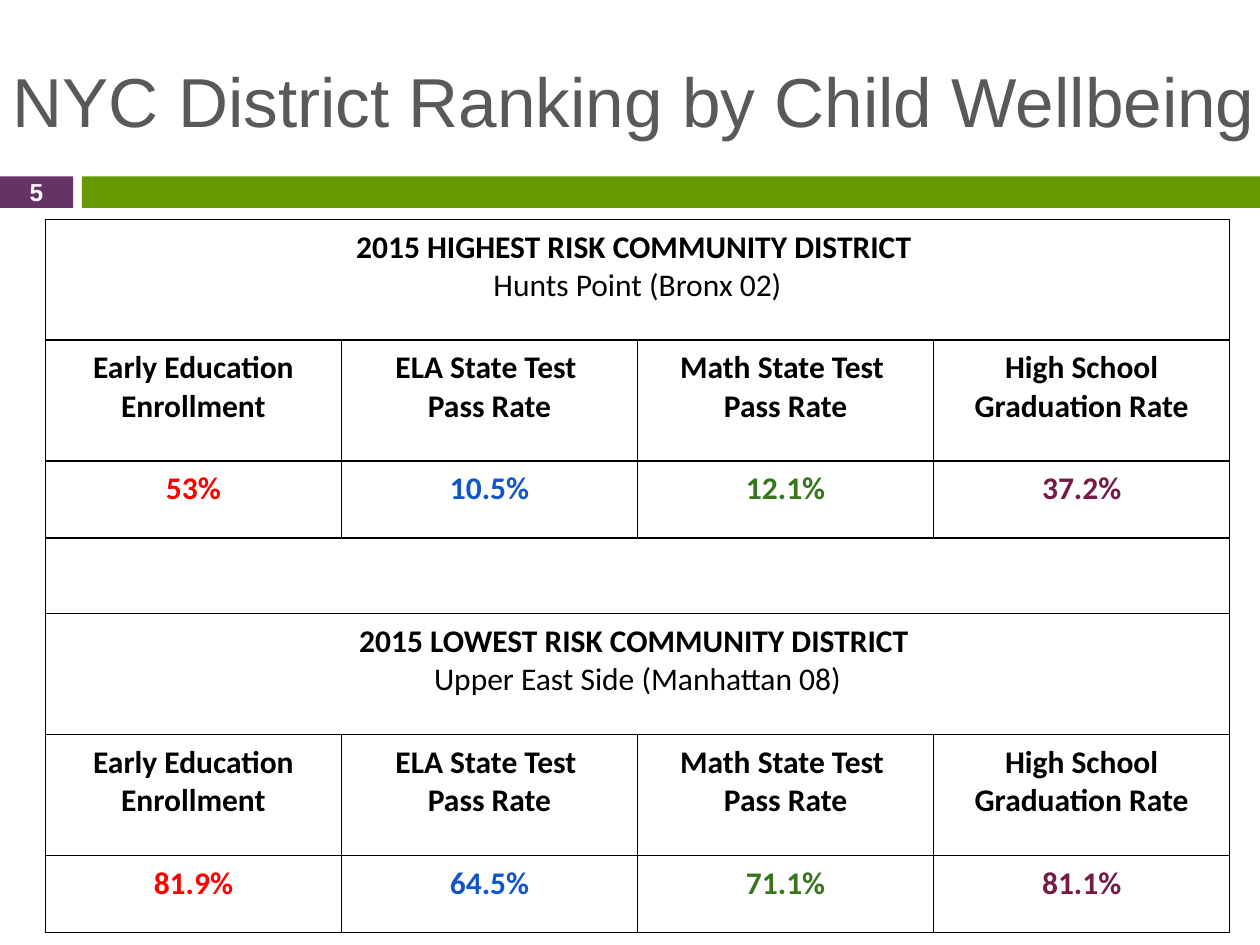
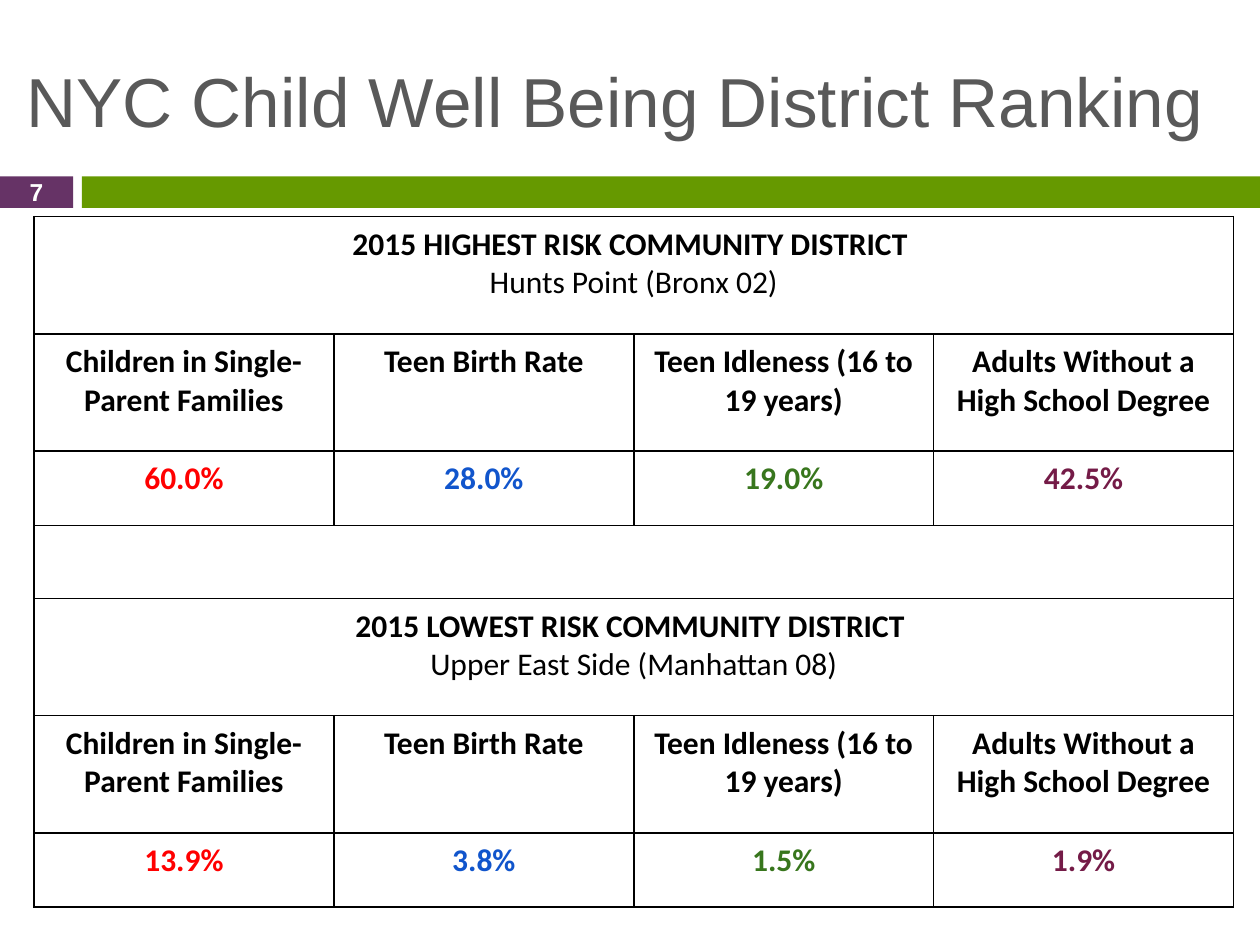
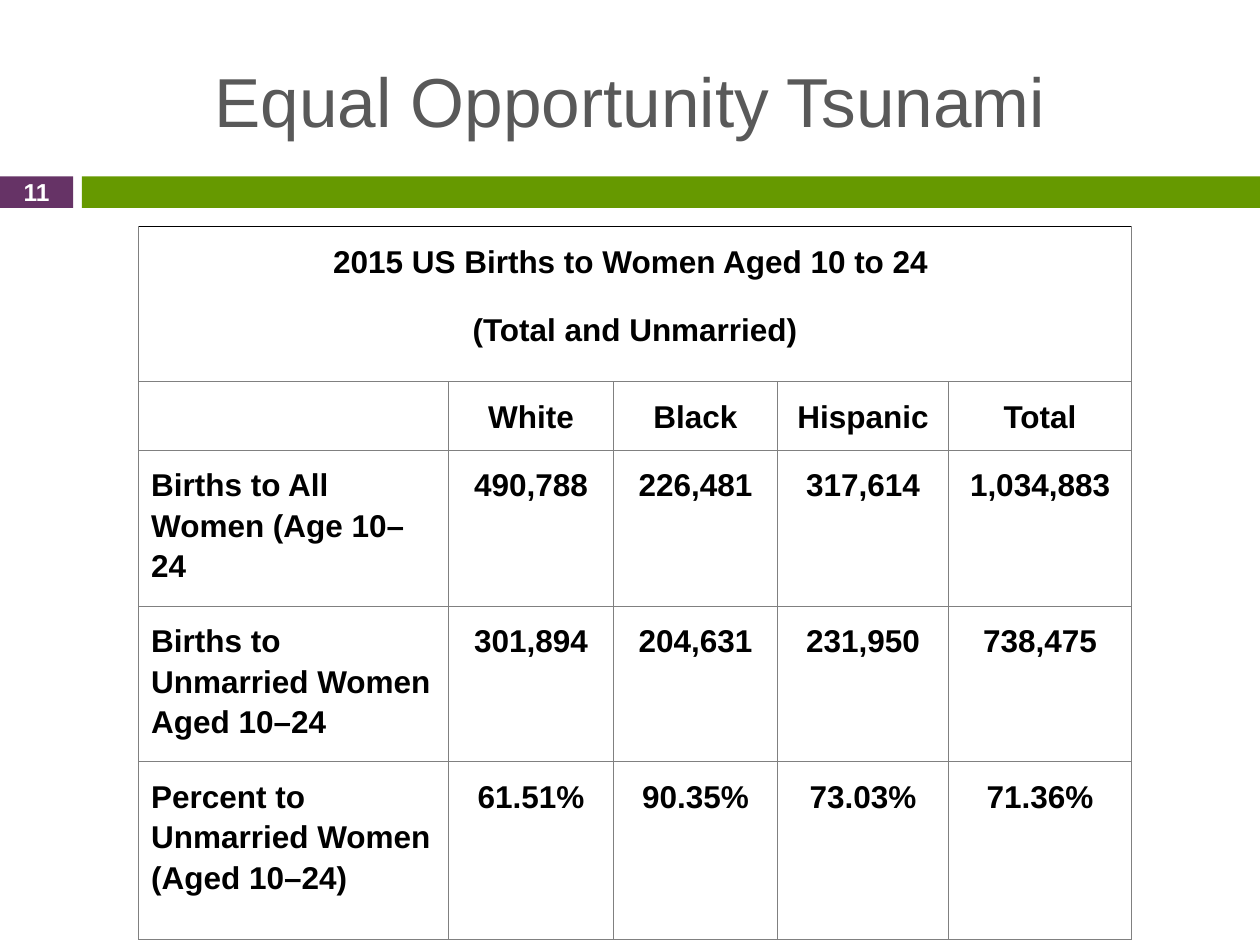
"""Build three slides of child wellbeing and birth statistics tables."""
import dataclasses

import lxml.etree
import pptx
import pptx.dml.color
import pptx.enum.shapes
import pptx.enum.text
import pptx.oxml.ns
import pptx.util

Inches = pptx.util.Inches
Pt = pptx.util.Pt
ALIGN = pptx.enum.text.PP_ALIGN
MIDDLE = pptx.enum.text.MSO_ANCHOR.MIDDLE


@dataclasses.dataclass(frozen=True)
class Theme:
    """Colours, fonts and type sizes shared by the slides."""
    purple: str = "663366"
    green: str = "669900"
    grey: str = "595959"
    rule: str = "808080"
    black: str = "000000"
    white: str = "FFFFFF"
    indicators: tuple = ("FF0000", "1155CC", "38761D", "741B47")
    heading_font: str = "Arial"
    district_font: str = "Calibri"
    title_size: float = 39.6
    table_size: float = 18
    number_size: float = 14


@dataclasses.dataclass(frozen=True)
class TableStyle:
    """Font, cell margin, rule and paragraph spacing of one kind of table."""
    font: str
    margin: float
    rule_color: str
    rule_width: float
    line_spacing: float = 1.0
    space_before: float = 0


THEME = Theme()
DISTRICT_STYLE = TableStyle(THEME.district_font, 0.07, THEME.black, 1)
BIRTHS_STYLE = TableStyle(THEME.heading_font, 0.1, THEME.rule, 0.75, 1.15, 16)

DISTRICTS = (
    ("2015 HIGHEST RISK COMMUNITY DISTRICT ", "Hunts Point (Bronx 02)"),
    ("2015 LOWEST RISK COMMUNITY DISTRICT ", "Upper East Side (Manhattan 08)"),
)
EDUCATION = (
    "Early Education Enrollment",
    "ELA State Test \nPass Rate",
    "Math State Test \nPass Rate",
    "High School Graduation Rate",
)
EDUCATION_RATES = (
    ("53%", "10.5%", "12.1%", "37.2%"),
    ("81.9%", "64.5%", "71.1%", "81.1%"),
)
FAMILY = (
    "Children in Single-Parent Families",
    "Teen Birth Rate",
    "Teen Idleness (16 to 19 years)",
    "Adults Without a High School Degree",
)
FAMILY_RATES = (
    ("60.0%", "28.0%", "19.0%", "42.5%"),
    ("13.9%", "3.8%", "1.5%", "1.9%"),
)
BIRTHS_HEADING = "2015 US Births to Women Aged 10 to 24 \n(Total and Unmarried)"
BIRTHS = (
    ("", "White", "Black", "Hispanic", "Total"),
    ("Births to All Women (Age 10–24", "490,788", "226,481", "317,614", "1,034,883"),
    ("Births to Unmarried Women Aged 10–24", "301,894", "204,631", "231,950", "738,475"),
    ("Percent to Unmarried Women (Aged 10–24)", "61.51%", "90.35%", "73.03%", "71.36%"),
)


def rgb(color):
    """Return the colour object for a hex string."""
    return pptx.dml.color.RGBColor.from_string(color)


def format_font(font, name, size, color, bold):
    """Set the face, size, colour and weight of a font."""
    font.name = name
    font.size = Pt(size)
    font.color.rgb = rgb(color)
    font.bold = bold


def set_margins(frame, side, vertical):
    """Set the horizontal and vertical margins of a text frame or cell."""
    frame.margin_left = frame.margin_right = Inches(side)
    frame.margin_top = frame.margin_bottom = Inches(vertical)


def add_band(slide, left, top, width, height, color):
    """Add a plain filled rectangle."""
    band = slide.shapes.add_shape(
        pptx.enum.shapes.MSO_SHAPE.RECTANGLE,
        Inches(left), Inches(top), Inches(width), Inches(height))
    band.shadow.inherit = False
    band.fill.solid()
    band.fill.fore_color.rgb = rgb(color)
    band.line.fill.background()


def add_page_number(slide, number, left, top, width, height):
    """Add the slide number over the purple band."""
    box = slide.shapes.add_textbox(
        Inches(left), Inches(top), Inches(width), Inches(height))
    frame = box.text_frame
    frame.word_wrap = True
    frame.vertical_anchor = MIDDLE
    set_margins(frame, 0.1, 0.05)
    paragraph = frame.paragraphs[0]
    paragraph.text = str(number)
    paragraph.alignment = ALIGN.CENTER
    format_font(paragraph.font, THEME.heading_font, THEME.number_size, THEME.white, True)


def add_slide(deck, title, number, left=0.11, width=9.78, align=ALIGN.LEFT):
    """Add a slide with its title, bands and number."""
    slide = deck.slides.add_slide(deck.slide_layouts[5])
    heading = slide.shapes.title
    heading.left, heading.top = Inches(left), Inches(0.25)
    heading.width, heading.height = Inches(width), Inches(1.08)
    frame = heading.text_frame
    frame.word_wrap = True
    frame.auto_size = pptx.enum.text.MSO_AUTO_SIZE.NONE
    frame.vertical_anchor = MIDDLE
    set_margins(frame, 0.1, 0.1)
    paragraph = frame.paragraphs[0]
    paragraph.text = title
    paragraph.alignment = align
    format_font(paragraph.font, THEME.heading_font, THEME.title_size, THEME.grey, False)
    add_band(slide, 0, 1.4, 0.58, 0.25, THEME.purple)
    add_band(slide, 0.65, 1.4, 9.35, 0.25, THEME.green)
    add_page_number(slide, number, 0, 1.39, 0.58, 0.27)
    return slide


def rule_cell(cell, style, top_color):
    """Draw the four borders of a cell."""
    properties = cell._tc.get_or_add_tcPr()
    for side in "LRTB":
        border = lxml.etree.SubElement(
            properties, pptx.oxml.ns.qn(f"a:ln{side}"), w=str(Pt(style.rule_width)))
        fill = lxml.etree.SubElement(border, pptx.oxml.ns.qn("a:solidFill"))
        color = top_color if side == "T" else style.rule_color
        lxml.etree.SubElement(fill, pptx.oxml.ns.qn("a:srgbClr"), val=color)


def add_grid(slide, left, top, columns, rows, style):
    """Add an empty white table with ruled cells."""
    table = slide.shapes.add_table(
        len(rows), len(columns), Inches(left), Inches(top),
        Inches(sum(columns)), Inches(sum(rows))).table
    table.first_row = table.horz_banding = False
    for column, width in zip(table.columns, columns):
        column.width = Inches(width)
    for index, (row, height) in enumerate(zip(table.rows, rows)):
        row.height = Inches(height)
        for cell in row.cells:
            set_margins(cell, style.margin, style.margin)
            rule_cell(cell, style, style.rule_color if index else THEME.black)
            cell.fill.solid()
            cell.fill.fore_color.rgb = rgb(THEME.white)
    return table


def merge_row(table, row):
    """Join all cells of a row and return the joined cell."""
    first = table.cell(row, 0)
    first.merge(table.cell(row, len(table.columns) - 1))
    return first


def write_cell(cell, text, style, color=THEME.black, align=ALIGN.CENTER, light_lines=()):
    """Write bold lines into a cell, except for those listed as light."""
    cell.text = text
    for index, paragraph in enumerate(cell.text_frame.paragraphs):
        paragraph.alignment = align
        paragraph.line_spacing = style.line_spacing
        if index:
            paragraph.space_before = Pt(style.space_before)
        format_font(paragraph.font, style.font, THEME.table_size, color,
                    index not in light_lines)


def add_district_table(slide, left, top, column, heights, indicators, rates):
    """Add the highest and lowest risk districts as two blocks in one table."""
    banner, value, gap = heights
    block = [banner, banner, value]
    table = add_grid(slide, left, top, [column] * len(indicators),
                     block + [gap] + block, DISTRICT_STYLE)
    merge_row(table, len(block))
    for index, (district, district_rates) in enumerate(zip(DISTRICTS, rates)):
        start = index * (len(block) + 1)
        write_cell(merge_row(table, start), "\n".join(district), DISTRICT_STYLE,
                   light_lines=(1,))
        for place, (indicator, rate, color) in enumerate(
                zip(indicators, district_rates, THEME.indicators)):
            write_cell(table.cell(start + 1, place), indicator, DISTRICT_STYLE)
            write_cell(table.cell(start + 2, place), rate, DISTRICT_STYLE, color)


def add_births_table(slide, left, top):
    """Add the table of births by group under its joined heading."""
    table = add_grid(slide, left, top, [2.46, 1.31, 1.3, 1.36, 1.45],
                     [1.23, 0.52, 1.17, 1.17, 1.41], BIRTHS_STYLE)
    write_cell(merge_row(table, 0), BIRTHS_HEADING, BIRTHS_STYLE)
    for row, entries in enumerate(BIRTHS, 1):
        for column, entry in enumerate(entries):
            if entry:
                write_cell(table.cell(row, column), entry, BIRTHS_STYLE,
                           align=ALIGN.CENTER if column else ALIGN.LEFT)


def main():
    """Build and save the deck."""
    deck = pptx.Presentation()
    deck.slide_width, deck.slide_height = Inches(10), Inches(7.5)

    education = add_slide(deck, "NYC District Ranking by Child Wellbeing", 5, 0, 10.11)
    add_district_table(education, 0.36, 1.74, 2.35, (0.96, 0.61, 0.6),
                       EDUCATION, EDUCATION_RATES)

    family = add_slide(deck, "NYC Child Well Being District Ranking", 7)
    add_district_table(family, 0.27, 1.72, 2.38, (0.93, 0.59, 0.58),
                       FAMILY, FAMILY_RATES)

    births = add_slide(deck, "Equal Opportunity Tsunami", 11, align=ALIGN.CENTER)
    add_births_table(births, 1.1, 1.8)

    deck.save("out.pptx")


if __name__ == "__main__":
    main()
